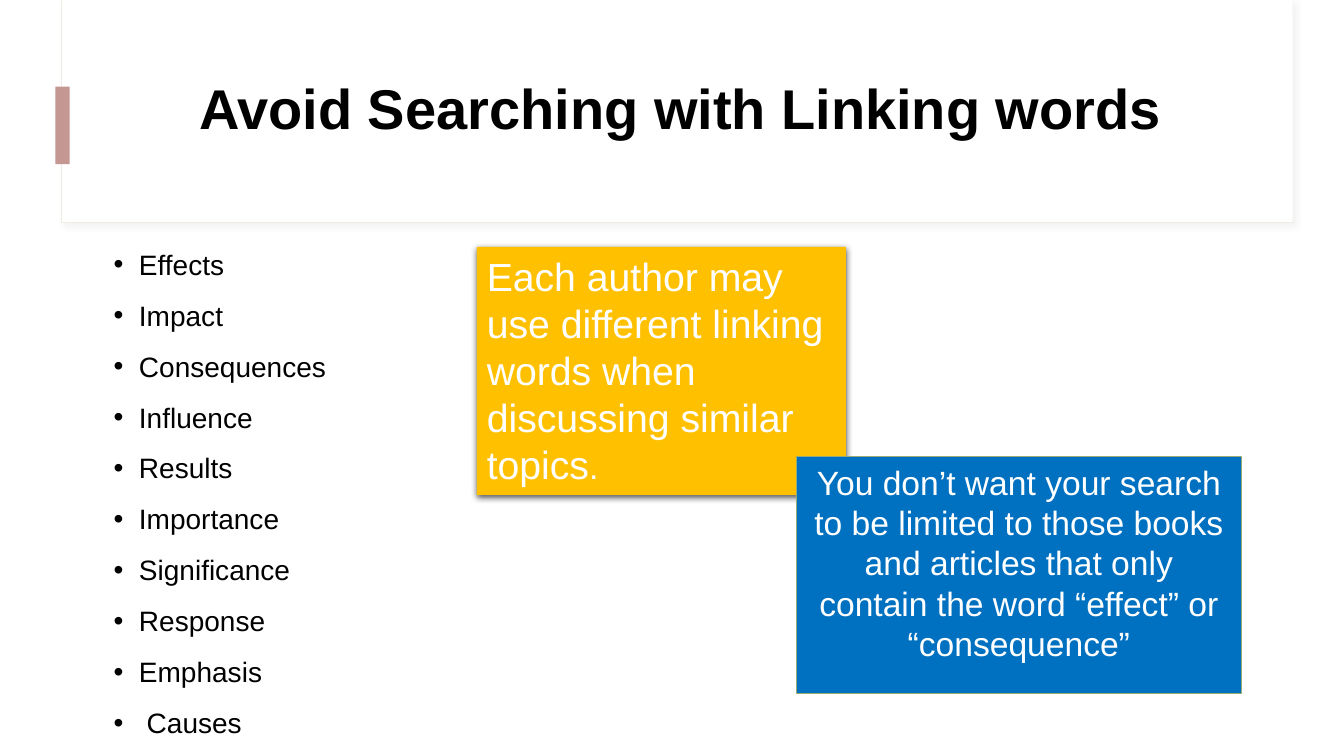
from lxml.etree import SubElement
from pptx import Presentation
from pptx.dml.color import RGBColor
from pptx.enum.shapes import MSO_SHAPE
from pptx.enum.text import MSO_ANCHOR, PP_ALIGN
from pptx.oxml.ns import qn
from pptx.util import Inches, Pt

COLORS = {
    "white": "FFFFFF", "black": "000000", "frame": "F0EBE5",
    "frame_shadow": "D9D9D9", "accent": "C49792", "yellow": "FFC000",
    "blue": "0070C0", "blue_line": "98AB74",
}
FONT = "Arial"
LINKING_WORDS = ["Effects", "Impact", "Consequences", "Influence", "Results",
                 "Importance", "Significance", "Response", "Emphasis", " Causes"]


def color(name):
    return RGBColor.from_string(COLORS[name])


def add_shadow(shape, name, alpha, blur, distance, angle):
    effects = shape._element.spPr.find(qn("a:effectLst"))
    shadow = SubElement(effects, qn("a:outerShdw"), blurRad=str(Pt(blur)),
                        dist=str(Pt(distance)), dir=str(angle * 60000),
                        algn="ctr", rotWithShape="0")
    tint = SubElement(shadow, qn("a:srgbClr"), val=COLORS[name])
    SubElement(tint, qn("a:alpha"), val=str(alpha * 1000))


def add_rectangle(slide, box, fill, line=None, line_width=0.75):
    shape = slide.shapes.add_shape(MSO_SHAPE.RECTANGLE, *map(Inches, box))
    shape.shadow.inherit = False
    shape.fill.solid()
    shape.fill.fore_color.rgb = color(fill)
    if line:
        shape.line.color.rgb = color(line)
        shape.line.width = Pt(line_width)
    else:
        shape.line.fill.background()
    return shape


def format_runs(paragraph, size, name, bold=False):
    for run in paragraph.runs:
        run.font.name = FONT
        run.font.size = Pt(size)
        run.font.bold = bold
        run.font.color.rgb = color(name)


def add_title(slide, box, text):
    left, top, width, height = box
    # Framed panel with a soft shadow, and its accent bar
    frame = add_rectangle(slide, box, "white", "frame")
    add_shadow(frame, "frame_shadow", 30, 4, 3, 45)
    add_rectangle(slide, (left + 0.01, top, width - 0.01, height - 0.01), "white")
    add_rectangle(slide, (left - 0.06, top + 0.86, 0.14, 0.77), "accent")
    # Title text
    text_box = slide.shapes.add_textbox(Inches(left + 0.57), Inches(top + 0.56),
                                        Inches(11.13), Inches(1.08))
    frame = text_box.text_frame
    frame.word_wrap = True
    frame.vertical_anchor = MSO_ANCHOR.MIDDLE
    frame.text = text
    paragraph = frame.paragraphs[0]
    paragraph.alignment = PP_ALIGN.CENTER
    paragraph.line_spacing = 0.9
    format_runs(paragraph, 40, "black", bold=True)


def add_bullets(slide, box, words):
    frame = slide.shapes.add_textbox(*map(Inches, box)).text_frame
    frame.word_wrap = True
    frame.text = "\n".join(words)
    for paragraph in frame.paragraphs:
        paragraph.line_spacing = 1.1
        paragraph.space_before = Pt(10)
        format_runs(paragraph, 20, "black")
        properties = paragraph._p.get_or_add_pPr()
        properties.set("marL", str(Inches(0.25)))
        properties.set("indent", str(-Inches(0.25)))
        SubElement(properties, qn("a:buFont"), typeface=FONT)
        SubElement(properties, qn("a:buChar"), char="•")


def add_note(slide, box, text, size, alignment, fill, line=None):
    note = add_rectangle(slide, box, fill, line, 0.5)
    frame = note.text_frame
    frame.word_wrap = True
    frame.vertical_anchor = MSO_ANCHOR.TOP
    frame.text = text
    paragraph = frame.paragraphs[0]
    paragraph.alignment = alignment
    format_runs(paragraph, size, "white")
    return note


def main():
    presentation = Presentation()
    presentation.slide_width = Inches(13.33)
    presentation.slide_height = Inches(7.5)
    slide = presentation.slides.add_slide(presentation.slide_layouts[6])

    add_title(slide, (0.61, 0, 12.21, 2.21), "Avoid Searching with Linking words")
    add_bullets(slide, (1.03, 2.37, 7.1, 5.37), LINKING_WORDS)

    # Overlapping notes
    author_note = add_note(
        slide, (4.73, 2.45, 3.66, 2.46),
        "Each author may use different linking words when discussing similar topics",
        28, PP_ALIGN.LEFT, "yellow")
    add_shadow(author_note, "black", 63, 4.5, 1.5, 90)
    paragraph = author_note.text_frame.paragraphs[0]
    paragraph.add_run().text = "."
    full_stop = paragraph.runs[-1].font
    full_stop.name = FONT
    full_stop.size = Pt(24)
    full_stop.color.rgb = color("white")
    add_note(
        slide, (7.9, 4.53, 4.41, 2.35),
        "You don’t want your search to be limited to those books and articles "
        "that only contain the word “effect” or “consequence”",
        24, PP_ALIGN.CENTER, "blue", "blue_line")

    presentation.save("out.pptx")


if __name__ == "__main__":
    main()
